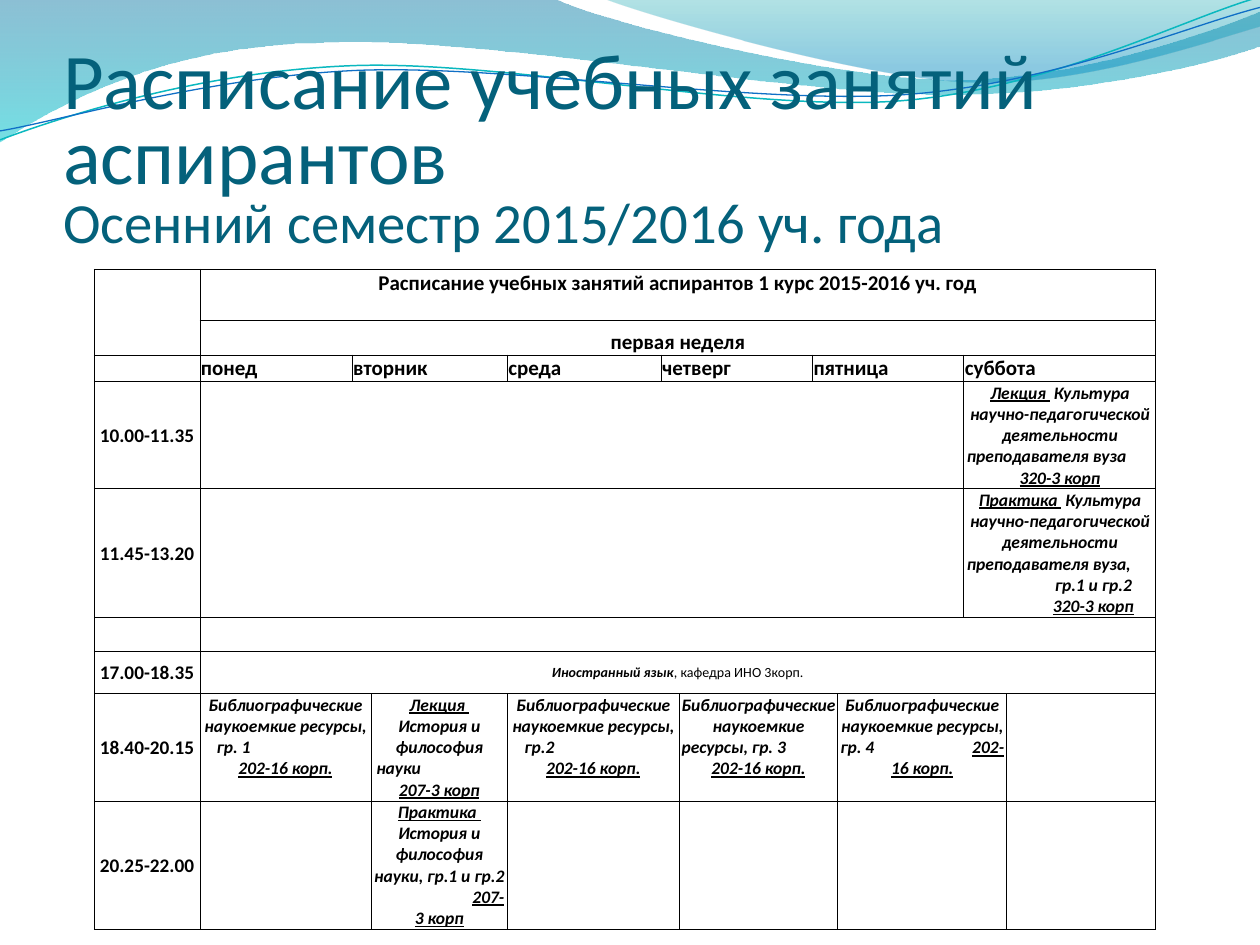
from lxml.etree import SubElement
from pptx import Presentation
from pptx.dml.color import RGBColor
from pptx.enum.text import MSO_ANCHOR as Anchor, MSO_AUTO_SIZE as AutoSize, PP_ALIGN as Align
from pptx.oxml.ns import qn
from pptx.util import Cm, Pt

COLORS = {
    "title": "04617B", "text": "000000", "border": "000000",
    "deep": "0074A1", "cyan": "00C6CF", "teal": "00A1A9", "sky": "008BBF",
    "teal_line": "0AB8BF", "blue_line": "0F6FC6",
}
FONT = "Calibri"
COLUMNS = [2.13, 3.07, 0.38, 2.75, 3.1, 0.36, 2.69, 0.51, 2.54, 0.86, 3.01]
ROWS = [0.5, 0.5, 0.69, 0.52, 2.15, 2.59, 0.68, 0.86, 2.15, 2.58]
# (first column, number of columns) of the six days
DAY_SPANS = [(1, 1), (2, 2), (4, 1), (5, 2), (7, 2), (9, 2)]
EVENING_SPANS = [(1, 2), (3, 1), (4, 2), (6, 2), (8, 2), (10, 1)]
DAYS = ["понед", "вторник", "среда", "четверг", "пятница", "суббота"]
TIMES = {4: "10.00-11.35", 5: "11.45-13.20", 7: "17.00-18.35",
         8: "18.40-20.15", 9: "20.25-22.00"}
CULTURE = " Культура\nнаучно-педагогической деятельности преподавателя вуза"
HISTORY = "\nИстория и философия науки"
LIBRARY = "Библиографические наукоемкие ресурсы, "
# kind, subject, room, tab stops in cm
SATURDAY = {
    4: ("Лекция ", CULTURE + "\t\n", "320-3 корп", [3.75]),
    5: ("Практика ", CULTURE + ",\t\n\tгр.1 и гр.2\n\t", "320-3 корп", [1.35, 3.75]),
}
EVENING = {
    8: [("", LIBRARY + "гр. 1\t\n", "202-16 корп.", [2.78]),
        ("Лекция ", HISTORY + "\t\n", "207-3 корп", [2.54]),
        ("", LIBRARY + "гр.2\t\n", "202-16 корп.", [2.78]),
        ("", LIBRARY + "гр. 3\t\n", "202-16 корп.", [3.1]),
        ("", LIBRARY + "гр. 4\t", "202-\n16 корп.", [2.66]),
        None],
    9: [None, ("Практика ", HISTORY + ", гр.1 и гр.2\n\t", "207-\n3 корп", [1.98]),
        None, None, None, None],
}


def rgb(name):
    return RGBColor.from_string(COLORS[name])


def write(para, text, size=12, color="text", bold=True, italic=False, underline=False):
    """Append text to a paragraph; a newline becomes a line break of the same size."""
    for number, line in enumerate(text.split("\n")):
        if number:
            para.add_line_break()
            last_break = para._p.findall(qn("a:br"))[-1]
            SubElement(last_break, qn("a:rPr"), sz=str(round(size * 100)))
        if line:
            span = para.add_run()
            span.text = line
            font = span.font
            font.name, font.size = FONT, Pt(size)
            font.bold, font.italic, font.underline = bold, italic, underline
            font.color.rgb = rgb(color)


def add_curve(page, left, top, start, steps, closed):
    """Draw a path of lines (2 numbers) and Bezier curves (6 numbers), in cm."""
    def scaled(x, y):
        return round((left + x) * 100), round((top + y) * 100)

    ends = [scaled(*start)] + [scaled(*step[-2:]) for step in steps]
    builder = page.shapes.build_freeform(*ends[0], scale=Cm(0.01))
    builder.add_line_segments(ends[1:], close=closed)
    shape = builder.convert_to_shape()
    shape.shadow.inherit = False
    origin = min(x for x, y in ends), min(y for x, y in ends)
    segments = list(shape._element.iter(qn("a:lnTo")))
    for segment, step in zip(segments, steps):
        if len(step) == 6:
            segment.tag = qn("a:cubicBezTo")
            for index in (0, 1):
                x, y = scaled(*step[2 * index:2 * index + 2])
                point = SubElement(segment, qn("a:pt"),
                                   x=str(x - origin[0]), y=str(y - origin[1]))
                segment.insert(index, point)
    return shape


def add_wave(page, left, top, start, steps, stops):
    shape = add_curve(page, left, top, start, steps, closed=True)
    shape.line.fill.background()
    shape.fill.gradient()
    shape.fill.gradient_angle = 270
    for stop, (position, color, opacity) in zip(shape.fill.gradient_stops, stops):
        stop.position = position
        stop.color.rgb = rgb(color)
        SubElement(stop._gs[0], qn("a:alpha"), val=str(opacity * 1000))


def add_thread(page, left, top, start, steps, color, width):
    shape = add_curve(page, left, top, start, steps, closed=False)
    shape.rotation = 357.3
    shape.fill.background()
    shape.line.color.rgb = rgb(color)
    shape.line.width = Pt(width)


def add_header_waves(page, left, top):
    add_wave(page, left, top, (0, -0.03), [
        (11.18, -0.03), (12.09, 0.43, 16.87, 1.6, 19.25, 1.6),
        (21.67, 1.6, 24.33, 0.66, 25.4, 0.23), (25.43, 0.91),
        (24.97, 1.12, 22.1, 1.93, 18.95, 1.9), (15.8, 1.9, 9.7, 0.71, 6.53, 0.86),
        (3.28, 0.89, 1.17, 2.11, -0.03, 2.87),
    ], [(0, "deep", 45), (1, "cyan", 55)])
    add_wave(page, left, top, (12.17, -0.03), [
        (12.93, 0.28, 17.32, 1.57, 19.53, 1.65),
        (21.74, 1.75, 24.41, 0.81, 25.4, 0.53), (25.4, 0),
    ], [(0, "teal", 30), (0.8, "sky", 45)])
    add_thread(page, left, top, (-0.05, 2.22), [
        (1.19, 1.82, 4.02, 1.04, 7.05, 1.06), (10.05, 1.07, 15.02, 2.37, 18.08, 2.29),
        (21.13, 2.2, 23.87, 0.91, 25.41, 0.55),
    ], "teal_line", 0.85)
    add_thread(page, left, top, (-0.04, 2.04), [
        (1.16, 1.9, 4.18, 1.15, 7.2, 1.16), (10.25, 1.18, 15.13, 2.23, 18.18, 2.17),
        (21.21, 2.1, 23.93, 1.06, 25.45, 0.75),
    ], "blue_line", 0.75)


def add_title(page, left, top, width, height):
    title = page.shapes.title
    page.shapes._spTree.append(title._element)  # in front of the waves
    title.left, title.top, title.width, title.height = map(Cm, (left, top, width, height))
    box = title.text_frame
    box.auto_size, box.word_wrap = AutoSize.NONE, True
    box.vertical_anchor = Anchor.BOTTOM
    box.margin_left = box.margin_right = box.margin_bottom = 0
    box.margin_top = Cm(0.13)
    para = box.paragraphs[0]
    para.alignment, para.line_spacing = Align.LEFT, 0.8
    write(para, "Расписание учебных занятий аспирантов\n", 45, "title", bold=False)
    write(para, "Осенний семестр 2015/2016 уч. года", 32.4, "title", bold=False)


def set_borders(cell, sides):
    properties = cell._tc.get_or_add_tcPr()
    for index, side in enumerate("LRTB"):
        line = SubElement(properties, qn("a:ln" + side), w=str(Pt(0.5)))
        properties.insert(index, line)
        if side in sides:
            fill = SubElement(line, qn("a:solidFill"))
            SubElement(fill, qn("a:srgbClr"), val=COLORS["border"])
        else:
            SubElement(line, qn("a:noFill"))


def place(table, row, col, span=1, rows=1, sides="LRTB", anchor=Anchor.TOP, align=Align.CENTER):
    """Format a cell, merged over span columns and rows; return its paragraph."""
    for r in range(row, row + rows):
        for c in range(col, col + span):
            part = table.cell(r, c)
            part.fill.background()
            set_borders(part, sides)
            part.margin_left = part.margin_right = part.margin_top = Cm(0.02)
            part.margin_bottom = 0
            SubElement(part.text_frame.paragraphs[0]._p, qn("a:endParaRPr"), sz="800")
    cell = table.cell(row, col)
    if span * rows > 1:
        cell.merge(table.cell(row + rows - 1, col + span - 1))
    cell.vertical_anchor = anchor
    para = cell.text_frame.paragraphs[0]
    para.alignment = align
    return para


def write_lesson(para, kind, subject, room, stops):
    tabs = SubElement(para._p.get_or_add_pPr(), qn("a:tabLst"))
    for stop in stops:
        SubElement(tabs, qn("a:tab"), pos=str(Cm(stop)), algn="l")
    style = dict(size=10, italic=True)
    write(para, kind, underline=True, **style)
    write(para, subject, **style)
    write(para, room, underline=True, **style)


def place_blank_run(table, row, spans):
    """Empty cells framed together, without lines between them."""
    for number, (col, span) in enumerate(spans):
        left = "L" if number == 0 else ""
        right = "R" if number == len(spans) - 1 else ""
        place(table, row, col, span, sides=left + right + "TB")


def add_schedule(page, left, top):
    frame = page.shapes.add_table(len(ROWS), len(COLUMNS), Cm(left), Cm(top),
                                  Cm(sum(COLUMNS)), Cm(sum(ROWS)))
    table = frame.table
    table.first_row = table.horz_banding = False
    for column, width in zip(table.columns, COLUMNS):
        column.width = Cm(width)
    for line, height in zip(table.rows, ROWS):
        line.height = Cm(height)

    for row, sides in enumerate(["LTR", "LR", "LRB"] + ["LRTB"] * 7):
        para = place(table, row, 0, sides=sides, anchor=Anchor.MIDDLE)
        write(para, TIMES.get(row, ""), 11)
    write(place(table, 0, 1, 10, rows=2),
          "Расписание учебных занятий аспирантов 1 курс 2015-2016 уч. год")
    write(place(table, 2, 1, 10, anchor=Anchor.BOTTOM), "первая неделя")
    for day, (col, span) in zip(DAYS, DAY_SPANS):
        write(place(table, 3, col, span, anchor=Anchor.BOTTOM, align=Align.LEFT), day)
    for row, lesson in SATURDAY.items():
        place_blank_run(table, row, DAY_SPANS[:-1])
        write_lesson(place(table, row, *DAY_SPANS[-1]), *lesson)
    place_blank_run(table, 6, DAY_SPANS)
    para = place(table, 7, 1, 10, anchor=Anchor.MIDDLE)
    write(para, "Иностранный язык", 8, italic=True)
    write(para, ", кафедра ИНО 3корп.", 8, bold=False)
    for row, lessons in EVENING.items():
        for lesson, (col, span) in zip(lessons, EVENING_SPANS):
            para = place(table, row, col, span)
            if lesson:
                write_lesson(para, *lesson)


def main():
    deck = Presentation()
    deck.slide_width, deck.slide_height = Cm(25.4), Cm(19.05)
    page = deck.slides.add_slide(deck.slide_layouts[5])
    add_header_waves(page, 0, 0)
    add_title(page, 1.27, 1.96, 22.86, 3.17)
    add_schedule(page, 1.9, 5.43)
    deck.save("out.pptx")


if __name__ == "__main__":
    main()
